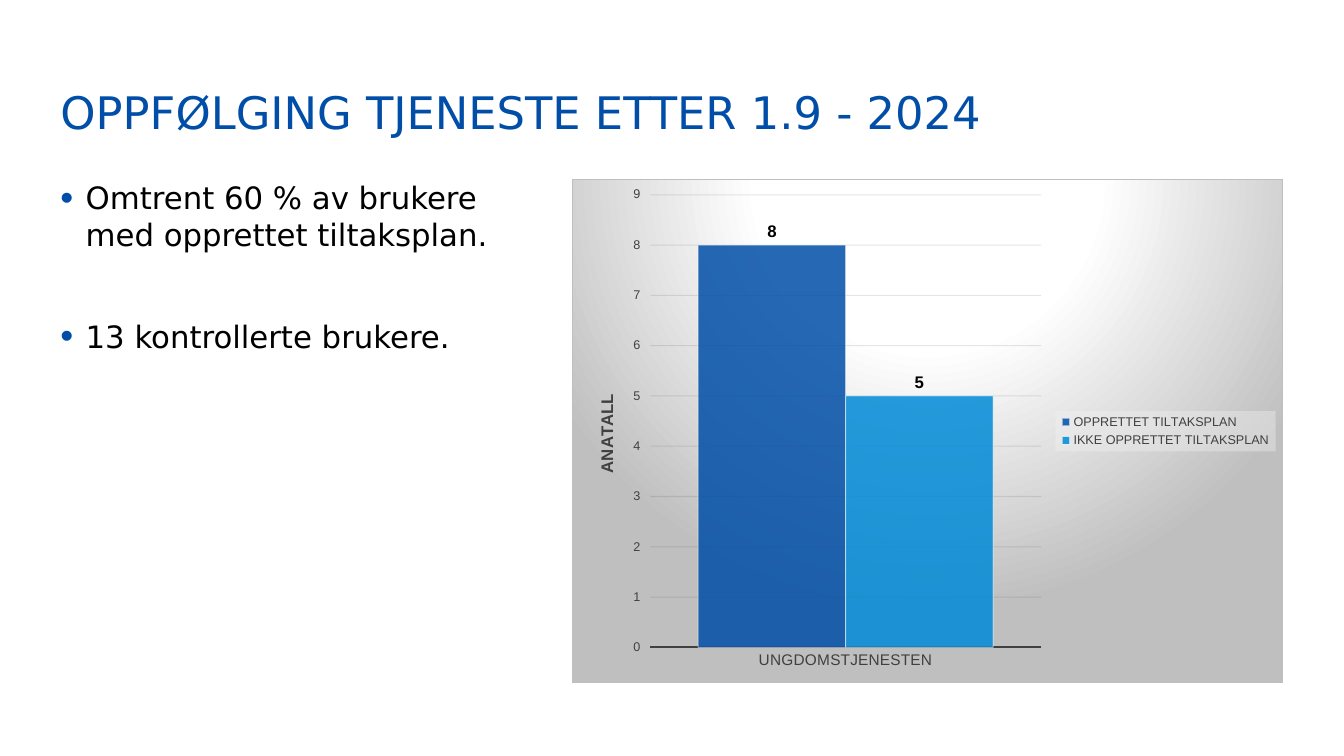
from lxml import etree
from pptx import Presentation
from pptx.chart.data import CategoryChartData
from pptx.dml.color import RGBColor
from pptx.enum.chart import (XL_CHART_TYPE as ChartType, XL_LABEL_POSITION as LabelPosition,
                             XL_LEGEND_POSITION as LegendPosition, XL_TICK_MARK as TickMark)
from pptx.enum.text import MSO_ANCHOR as Anchor
from pptx.oxml import parse_xml
from pptx.oxml.ns import nsdecls, qn
from pptx.util import Pt

COLORS = {
    "title": "004EA8", "black": "000000", "white": "FFFFFF", "gray": "404040",
    "grid": "0D0D0D", "edge": "BFBFBF", "legend": "F2F2F2",
    "created": "004EA7", "missing": "008AD7",
}
TEXT_FONT, CHART_FONT = "DejaVu Sans", "Arial"
INDENT = 18
SERIES = [("OPPRETTET TILTAKSPLAN", 8, "created"),
          ("IKKE OPPRETTET TILTAKSPLAN", 5, "missing")]


def rgb(name):
    return RGBColor.from_string(COLORS[name])


def style_font(font, size, color, name=CHART_FONT, bold=False):
    font.size, font.name, font.bold = Pt(size), name, bold
    font.color.rgb = rgb(color)


def style_line(line, color, width):
    line.color.rgb = rgb(color)
    line.width = Pt(width)


def add_bullet(para):
    props = para._p.get_or_add_pPr()
    props.set("marL", str(Pt(INDENT)))
    props.set("indent", str(-Pt(INDENT)))
    color = etree.SubElement(props, qn("a:buClr"))
    etree.SubElement(color, qn("a:srgbClr"), val=COLORS["title"])
    etree.SubElement(props, qn("a:buSzPct"), val="120000")
    etree.SubElement(props, qn("a:buFont"), typeface=CHART_FONT)
    etree.SubElement(props, qn("a:buChar"), char="•")


def add_text(page, box, lines, size, color, anchor=Anchor.TOP, spacing=1.0, gap=0, bullet=False):
    frame = page.shapes.add_textbox(*map(Pt, box)).text_frame
    frame.word_wrap = True
    frame.vertical_anchor = anchor
    frame.margin_left = frame.margin_right = frame.margin_top = frame.margin_bottom = 0
    for number, line in enumerate(lines):
        para = frame.add_paragraph() if number else frame.paragraphs[0]
        para.line_spacing = spacing
        if number:
            para.space_before = Pt(gap)
        if bullet:
            add_bullet(para)
        span = para.add_run()
        span.text = line
        style_font(span.font, size, color, TEXT_FONT)


def set_alpha(colors, percent):
    for color in colors:
        etree.SubElement(color, qn("a:alpha"), val=str(percent * 1000))


def set_layout(parent, index, inner=False, **shares):
    """Fix a chart part at shares (x, y, w, h) of the chart area."""
    for old in parent.findall(qn("c:layout")):
        parent.remove(old)
    layout = parse_xml(f"<c:layout {nsdecls('c')}><c:manualLayout/></c:layout>")
    if inner:
        etree.SubElement(layout[0], qn("c:layoutTarget"), val="inner")
    for key in "xy":
        etree.SubElement(layout[0], qn(f"c:{key}Mode"), val="edge")
    for key, share in shares.items():
        etree.SubElement(layout[0], qn(f"c:{key}"), val=str(share))
    parent.insert(index, layout)


def fill_chart_area(chart):
    stops = "".join(f'<a:gs pos="{pos * 1000}"><a:srgbClr val="{COLORS[name]}"/></a:gs>'
                    for pos, name in [(0, "white"), (39, "white"), (100, "edge")])
    area = parse_xml(
        f'<c:spPr {nsdecls("c", "a")}><a:gradFill><a:gsLst>{stops}</a:gsLst><a:path path="circle">'
        '<a:fillToRect l="50000" t="-80000" r="50000" b="180000"/></a:path></a:gradFill>'
        f'<a:ln w="{Pt(0.75)}"><a:solidFill><a:srgbClr val="{COLORS["edge"]}"/></a:solidFill></a:ln></c:spPr>')
    chart.element.find(qn("c:chart")).addnext(area)


def style_axes(chart):
    categories, values = chart.category_axis, chart.value_axis
    categories.major_tick_mark = categories.minor_tick_mark = TickMark.NONE
    style_font(categories.tick_labels.font, 11, "gray")
    style_line(categories.format.line, "gray", 1.5)

    values.minimum_scale, values.maximum_scale, values.major_unit = 0, 9, 1
    values.major_tick_mark, values.minor_tick_mark = TickMark.OUTSIDE, TickMark.NONE
    style_font(values.tick_labels.font, 9, "gray")
    values.format.line.fill.background()
    values.has_major_gridlines = True
    style_line(values.major_gridlines.format.line, "grid", 0.75)
    set_alpha(chart.element.xpath(".//c:majorGridlines//a:srgbClr"), 10)

    span = values.axis_title.text_frame.paragraphs[0].add_run()
    span.text = "ANATALL"
    style_font(span.font, 12, "gray", bold=True)
    set_layout(chart.element.xpath(".//c:valAx/c:title")[0], 1, x=0.03, y=0.42)


def style_legend(chart):
    chart.has_legend = True
    chart.legend.position = LegendPosition.RIGHT
    chart.legend.include_in_layout = False
    style_font(chart.legend.font, 9, "gray")
    legend = chart.element.xpath(".//c:legend")[0]
    set_layout(legend, 1, x=0.68, y=0.46, w=0.31, h=0.08)
    panel = parse_xml(f'<c:spPr {nsdecls("c", "a")}><a:solidFill><a:srgbClr val="{COLORS["legend"]}"/>'
                      '</a:solidFill></c:spPr>')
    legend.find(qn("c:txPr")).addprevious(panel)
    set_alpha(panel.iter(qn("a:srgbClr")), 39)


def add_column_chart(page, box):
    data = CategoryChartData()
    data.categories = ["UNGDOMSTJENESTEN"]
    for name, count, _ in SERIES:
        data.add_series(name, [count])
    chart = page.shapes.add_chart(ChartType.COLUMN_CLUSTERED, *map(Pt, box), data).chart
    chart.has_title = False
    style_font(chart.font, 10, "black")
    plot = chart.plots[0]
    plot.gap_width, plot.overlap, plot.vary_by_categories = 65, 0, False
    for series, (_, _, color) in zip(plot.series, SERIES):
        series.format.fill.solid()
        series.format.fill.fore_color.rgb = rgb(color)
        style_line(series.format.line, "white", 0.75)
        labels = series.data_labels
        labels.show_value, labels.position = True, LabelPosition.OUTSIDE_END
        style_font(labels.font, 12, "black", bold=True)
    set_alpha(chart.element.xpath(".//c:ser/c:spPr/a:solidFill/a:srgbClr"), 85)
    set_alpha(chart.element.xpath(".//c:ser/c:spPr/a:ln//a:srgbClr"), 50)
    style_axes(chart)
    style_legend(chart)
    set_layout(chart.element.xpath(".//c:plotArea")[0], 0, inner=True, x=0.11, y=0.03, w=0.55, h=0.9)
    fill_chart_area(chart)


def build_follow_up_slide(page, box):
    left, top, width, height = box
    title_height, body_top, body_height = 76.3, top + 105, 360
    text_width, chart_width = 342, 508.3
    add_text(page, (left, top, width, title_height), ["OPPFØLGING TJENESTE ETTER 1.9 - 2024"],
             32, "title", anchor=Anchor.BOTTOM, spacing=0.9)
    add_text(page, (left, body_top, text_width, body_height),
             ["Omtrent 60 % av brukere med opprettet tiltaksplan.", "13 kontrollerte brukere."],
             22, "black", gap=46, bullet=True)
    add_column_chart(page, (left + width - chart_width, body_top, chart_width, body_height))


def main():
    deck = Presentation()
    deck.slide_width, deck.slide_height = Pt(960), Pt(540)
    page = deck.slides.add_slide(deck.slide_layouts[6])
    build_follow_up_slide(page, (43.2, 23, 873.4, 465))
    deck.save("out.pptx")


if __name__ == "__main__":
    main()
